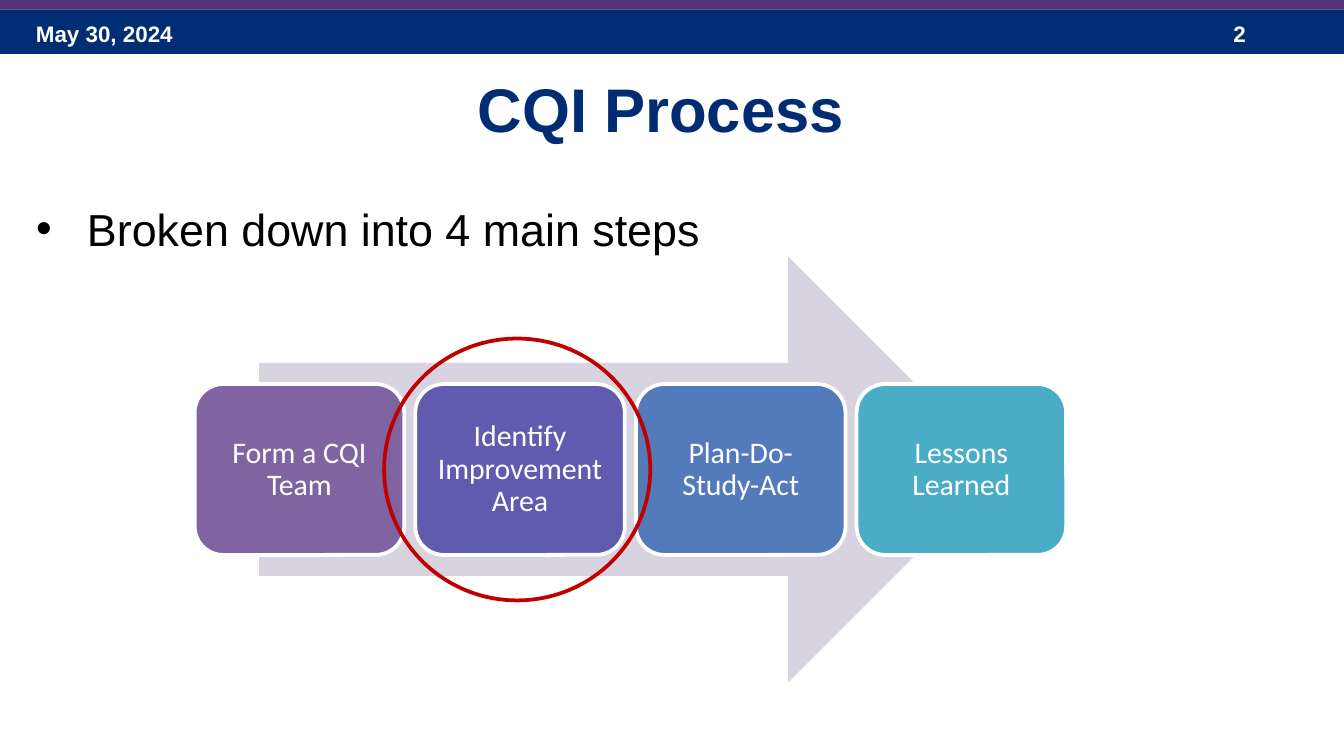
from dataclasses import dataclass

from lxml import etree
from pptx import Presentation
from pptx.dml.color import RGBColor
from pptx.enum import shapes as sh, text as tx
from pptx.oxml import ns
from pptx.util import Cm, Pt


@dataclass(frozen=True)
class Theme:
    navy: str = "002D73"
    title: str = "002D72"
    plum: str = "553278"
    arrow: str = "D8D3E0"
    ring: str = "C00000"
    white: str = "FFFFFF"
    black: str = "000000"
    font: str = "Arial"
    step_font: str = "Calibri"
    small: int = 12
    step: int = 16
    body: int = 24
    head: int = 33
    line: int = 2


@dataclass(frozen=True)
class Box:
    left: float
    top: float
    width: float
    height: float

    def cm(self) -> tuple:
        return Cm(self.left), Cm(self.top), Cm(self.width), Cm(self.height)


@dataclass(frozen=True)
class Step:
    label: str
    fill: str


T = Theme()
KIND = sh.MSO_SHAPE
ALIGN = tx.PP_ALIGN
ANCHOR = tx.MSO_ANCHOR


def write(shape, words: str, *, size: int, color: str, font: str = T.font,
          bold: bool = False, align=ALIGN.LEFT, anchor=ANCHOR.TOP,
          inset: float | None = None, space: float = 1.0,
          bullet: float = 0) -> None:
    """Put one formatted paragraph in a shape; bullet is its indent in cm."""
    frame = shape.text_frame
    frame.word_wrap = True
    frame.auto_size = tx.MSO_AUTO_SIZE.NONE
    frame.vertical_anchor = anchor
    if inset is not None:
        frame.margin_left = frame.margin_right = Cm(inset)
        frame.margin_top = frame.margin_bottom = Cm(inset)
    para = frame.paragraphs[0]
    para.text = words
    para.alignment = align
    para.line_spacing = space
    para.space_before = Pt(0)
    if bullet:
        props = para._p.get_or_add_pPr()
        props.set("marL", str(Cm(bullet)))
        props.set("indent", str(-Cm(bullet)))
        etree.SubElement(props, ns.qn("a:buFont")).set("typeface", font)
        etree.SubElement(props, ns.qn("a:buChar")).set("char", "•")
    style = para.runs[0].font
    style.name, style.size, style.bold = font, Pt(size), bold
    style.color.rgb = RGBColor.from_string(color)


def draw(slide, kind, box: Box, fill: str | None = None,
         line: str | None = None):
    """Add a flat preset shape with an optional fill and outline."""
    shape = slide.shapes.add_shape(kind, *box.cm())
    shape.shadow.inherit = False
    if fill:
        shape.fill.solid()
        shape.fill.fore_color.rgb = RGBColor.from_string(fill)
    else:
        shape.fill.background()
    if line:
        shape.line.color.rgb = RGBColor.from_string(line)
        shape.line.width = Pt(T.line)
    else:
        shape.line.fill.background()
    return shape


def place(shape, box: Box) -> None:
    shape.left, shape.top, shape.width, shape.height = box.cm()


def header(slide) -> None:
    draw(slide, KIND.RECTANGLE, Box(0, 0.18, 25.4, 0.84), T.navy)
    for words, left, width in (("May 30, 2024", 0.43, 5.92),
                               ("2", 23.06, 1.9)):
        label = slide.shapes.add_textbox(*Box(left, 0.25, width, 0.76).cm())
        write(label, words, size=T.small, color=T.white, bold=True)
    draw(slide, KIND.RECTANGLE, Box(0, -0.05, 25.4, 0.23), T.plum)


def process(slide, steps: list[Step]) -> None:
    draw(slide, KIND.RIGHT_ARROW, Box(4.9, 4.85, 14.02, 8.05), T.arrow)
    pitch = 4.17
    for i, step in enumerate(steps):
        card = draw(slide, KIND.ROUNDED_RECTANGLE,
                    Box(3.68 + i * pitch, 7.26, 3.96, 3.23),
                    step.fill, T.white)
        write(card, step.label, size=T.step, color=T.white,
              font=T.step_font, align=ALIGN.CENTER, anchor=ANCHOR.MIDDLE,
              inset=0.17, space=0.9)


def main() -> None:
    deck = Presentation()
    deck.slide_width, deck.slide_height = Cm(25.4), Cm(14.29)
    slide = deck.slides.add_slide(deck.slide_layouts[1])

    header(slide)

    # Title and lead-in
    title, body = slide.shapes.title, slide.placeholders[1]
    place(title, Box(0.43, 1.22, 24.13, 1.78))
    write(title, "CQI Process", size=T.head, color=T.title, bold=True,
          align=ALIGN.CENTER)
    place(body, Box(0.43, 3.68, 24.13, 8.53))
    write(body, "Broken down into 4 main steps", size=T.body,
          color=T.black, bullet=0.96)

    # Steps on the arrow, with the current one ringed
    process(slide, [
        Step("Form a CQI Team", "8064A2"),
        Step("Identify Improvement Area", "5F5BAE"),
        Step("Plan-Do-Study-Act", "537ABA"),
        Step("Lessons Learned", "4BACC6"),
    ])
    draw(slide, KIND.OVAL, Box(7.26, 6.4, 5.03, 4.95), line=T.ring)

    deck.save("out.pptx")


if __name__ == "__main__":
    main()
